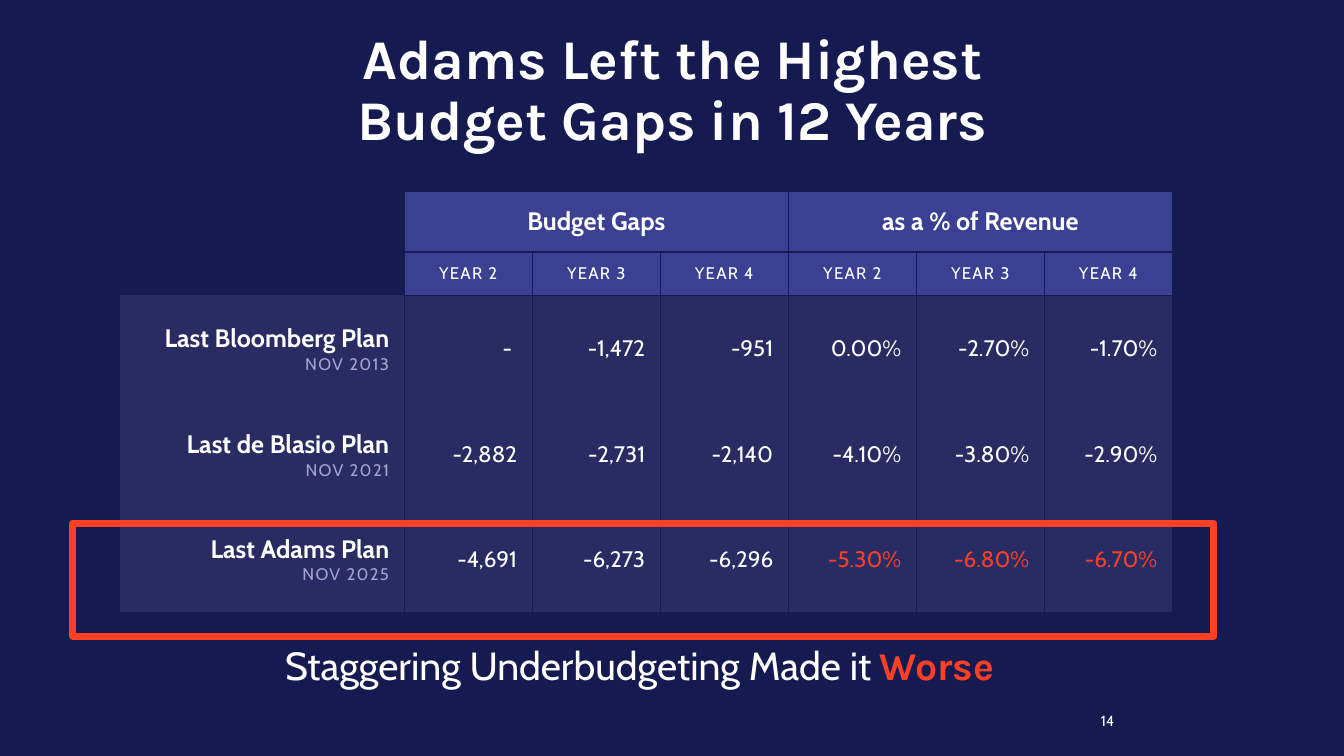
from pptx import Presentation
from pptx.dml.color import RGBColor
from pptx.enum.shapes import MSO_SHAPE
from pptx.enum.text import MSO_ANCHOR as Anchor, PP_ALIGN as Align
from pptx.oxml.ns import qn
from pptx.util import Inches, Pt
from lxml.etree import SubElement

NAVY = RGBColor(0x15, 0x1A, 0x51)
INDIGO = RGBColor(0x3B, 0x40, 0x92)
PANEL = RGBColor(0x29, 0x2C, 0x63)
LILAC = RGBColor(0xA7, 0xA1, 0xD0)
RED = RGBColor(0xFF, 0x40, 0x27)
WHITE = RGBColor(0xFF, 0xFF, 0xFF)

PLAIN_TABLE_STYLE = "{2D5ABB26-0587-4C30-8999-92F81FD0307C}"
COLUMN_WIDTHS = [2.82] + [1.27] * 6
ROW_HEIGHTS = [0.6, 0.43, 1.06, 1.04, 1.04]
GROUPS = ["Budget Gaps", "as a % of Revenue"]
YEARS = ["YEAR 2", "YEAR 3", "YEAR 4"]
PLANS = [
    ("Last Bloomberg Plan", "NOV 2013",
     ["- ", "-1,472", "-951", "0.00%", "-2.70%", "-1.70%"]),
    ("Last de Blasio Plan", "NOV 2021",
     ["-2,882", "-2,731", "-2,140", "-4.10%", "-3.80%", "-2.90%"]),
    ("Last Adams Plan", "NOV 2025",
     ["-4,691", "-6,273", "-6,296", "-5.30%", "-6.80%", "-6.70%"]),
]


def set_font(font, size, color=WHITE, bold=False, name="Cabin"):
    """Set the typeface, size, colour and weight of a font."""
    font.name = name
    font.size = Pt(size)
    font.bold = bold
    font.color.rgb = color


def add_run(paragraph, text, spacing=0):
    """Add a run with letter spacing in points and return it."""
    run = paragraph.add_run()
    run.text = text
    if spacing:
        run.font._element.set("spc", str(round(spacing * 100))) if hasattr(
            run.font, "_element") else run._r.get_or_add_rPr().set(
            "spc", str(round(spacing * 100)))
    return run


def add_text_box(slide, left, top, width, height):
    """Add a wrapping text box and return its frame."""
    frame = slide.shapes.add_textbox(
        Inches(left), Inches(top), Inches(width), Inches(height)).text_frame
    frame.word_wrap = True
    return frame


def add_title(slide, left, top, width, height):
    """Add the centred headline."""
    frame = add_text_box(slide, left, top, width, height)
    frame.vertical_anchor = Anchor.MIDDLE
    paragraph = frame.paragraphs[0]
    paragraph.alignment = Align.CENTER
    paragraph.line_spacing = 0.9
    add_run(paragraph, "Adams Left the Highest Budget Gaps in 12 Years")
    set_font(paragraph.font, 40, bold=True, name="Karla")


def add_conclusion(slide, left, top, width, height):
    """Add the closing sentence with its stressed last word."""
    paragraph = add_text_box(slide, left, top, width, height).paragraphs[0]
    set_font(add_run(paragraph, "Staggering Underbudgeting Made it ").font, 28)
    set_font(add_run(paragraph, "Worse").font, 28, RED, True, "Karla")


def add_page_number(slide, left, top, width, height):
    """Add the right-aligned page number."""
    paragraph = add_text_box(slide, left, top, width, height).paragraphs[0]
    paragraph.alignment = Align.RIGHT
    add_run(paragraph, "14")
    set_font(paragraph.font, 10.5)


def format_cell(cell, fill, sides, margins=(0.15, 0.15), anchor=Anchor.MIDDLE):
    """Set the borders, fill, margins and anchor of a table cell."""
    properties = cell._tc.get_or_add_tcPr()
    for side in sides:
        line = SubElement(properties, qn(f"a:ln{side}"), w=str(Pt(1)))
        solid = SubElement(line, qn("a:solidFill"))
        SubElement(solid, qn("a:srgbClr"), val=str(NAVY))
    cell.fill.solid()
    cell.fill.fore_color.rgb = fill
    cell.margin_left = cell.margin_right = Inches(margins[0])
    cell.margin_top = cell.margin_bottom = Inches(margins[1])
    cell.vertical_anchor = anchor


def write_cell(cell, text, size, align, color=WHITE, bold=False, spacing=0):
    """Write one line of text in a table cell."""
    paragraph = cell.text_frame.paragraphs[0]
    paragraph.alignment = align
    add_run(paragraph, text, spacing)
    set_font(paragraph.font, size, color, bold)


def fill_header(table):
    """Fill the two header rows."""
    for row in range(2):
        format_cell(table.cell(row, 0), NAVY, "", (0, 0))
    for group, heading in enumerate(GROUPS):
        first = 1 + group * len(YEARS)
        for offset, year in enumerate(YEARS):
            format_cell(table.cell(0, first + offset), INDIGO, "LRB",
                        (0.05, 0.15), Anchor.BOTTOM)
            year_cell = table.cell(1, first + offset)
            format_cell(year_cell, INDIGO, "LRT", (0.15, 0))
            write_cell(year_cell, year, 12, Align.CENTER, spacing=0.9)
        heading_cell = table.cell(0, first)
        heading_cell.merge(table.cell(0, first + len(YEARS) - 1))
        write_cell(heading_cell, heading, 18, Align.CENTER, bold=True)


def fill_plan(table, row, plan, date, values):
    """Fill one plan row, with the last plan's percentages in red."""
    plan_cell = table.cell(row, 0)
    format_cell(plan_cell, PANEL, "R")
    paragraph = plan_cell.text_frame.paragraphs[0]
    paragraph.alignment = Align.RIGHT
    set_font(add_run(paragraph, plan).font, 18, bold=True)
    paragraph.add_line_break()
    set_font(add_run(paragraph, date, 0.9).font, 12, LILAC)
    is_last = row == len(ROW_HEIGHTS) - 1
    for column, value in enumerate(values, 1):
        cell = table.cell(row, column)
        format_cell(cell, PANEL, "LR")
        color = RED if is_last and column > len(YEARS) else WHITE
        write_cell(cell, value, 16, Align.RIGHT, color)


def add_gap_table(slide, left, top):
    """Add the table of budget gaps by plan and year."""
    frame = slide.shapes.add_table(
        len(ROW_HEIGHTS), len(COLUMN_WIDTHS), Inches(left), Inches(top),
        Inches(sum(COLUMN_WIDTHS)), Inches(sum(ROW_HEIGHTS)))
    table = frame.table
    table.horz_banding = False
    table._tbl.tblPr.find(qn("a:tableStyleId")).text = PLAIN_TABLE_STYLE
    for column, width in zip(table.columns, COLUMN_WIDTHS):
        column.width = Inches(width)
    for row, height in zip(table.rows, ROW_HEIGHTS):
        row.height = Inches(height)
    fill_header(table)
    for row, plan in enumerate(PLANS, 2):
        fill_plan(table, row, *plan)


def add_highlight(slide, left, top, width, height):
    """Add the red frame around the last plan."""
    shape = slide.shapes.add_shape(
        MSO_SHAPE.RECTANGLE, Inches(left), Inches(top), Inches(width), Inches(height))
    shape.shadow.inherit = False
    shape.fill.background()
    shape.line.color.rgb = RED
    shape.line.width = Pt(5)


def main():
    """Build and save the presentation."""
    presentation = Presentation()
    presentation.slide_width = Inches(13.33)
    presentation.slide_height = Inches(7.5)
    slide = presentation.slides.add_slide(presentation.slide_layouts[6])
    slide.background.fill.solid()
    slide.background.fill.fore_color.rgb = NAVY
    add_page_number(slide, 9.4, 7.01, 1.75, 0.49)
    add_title(slide, 2.95, 0.25, 7.44, 1.32)
    add_conclusion(slide, 2.73, 6.31, 7.49, 0.84)
    add_gap_table(slide, 1.19, 1.9)
    add_highlight(slide, 0.72, 5.19, 11.32, 1.12)
    presentation.save("out.pptx")


if __name__ == "__main__":
    main()
